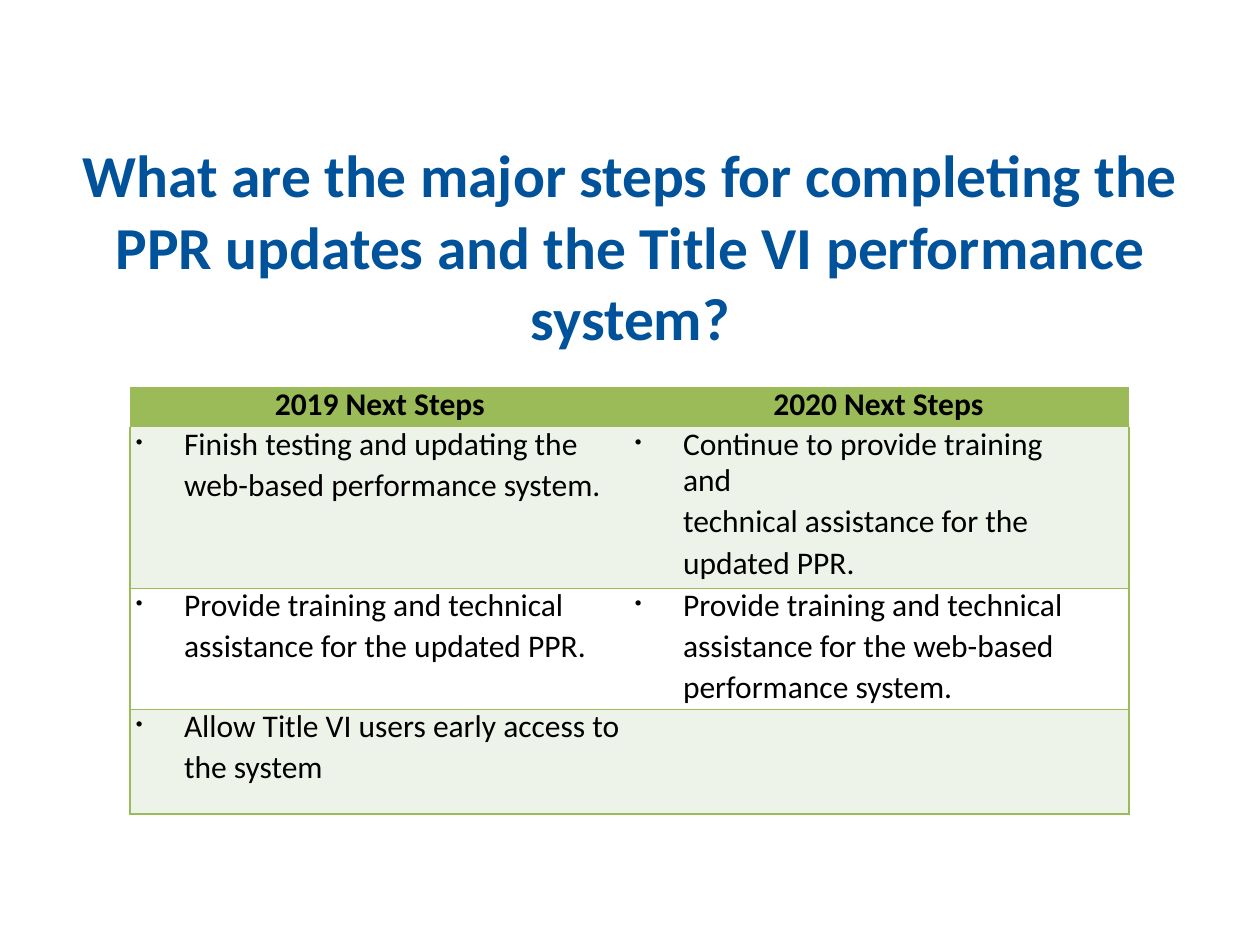
from lxml import etree
from pptx import Presentation
from pptx import util as u
from pptx.dml.color import RGBColor
from pptx.enum import text
from pptx.oxml.ns import qn

COLORS = {"title": "00529B", "ink": "000000", "green": "9BBA58", "tint": "EEF3EA"}
FONT = "Calibri"

TITLE = ("What are the major steps for completing the PPR updates "
         "and the Title VI performance system?")
HEADERS = ["2019 Next Steps", "2020 Next Steps"]
# Each step is a bulleted first line and its continuation.
STEPS = [
    [("Finish testing and updating the", "web-based performance system."),
     ("Continue to provide training and", "technical assistance for the updated PPR.")],
    [("Provide training and technical", "assistance for the updated PPR."),
     ("Provide training and technical", "assistance for the web-based performance system.")],
    [("Allow Title VI users early access to", "the system")],
]
COLUMN_WIDTHS = [9.85, 10.29]
ROW_HEIGHTS = [0.81, 3.25, 2.44, 2.11]
HEADER_INDENTS = [2.92, 3.12]
STEP_INDENTS = [1.09, 1.3]
RIGHT_MARGINS = [0, 0.7]
HANGING = 0.97


def rgb(name):
    return RGBColor.from_string(COLORS[name])


def style(paragraph, size, color, bold=False):
    paragraph.font.name = FONT
    paragraph.font.size = u.Pt(size)
    paragraph.font.bold = bold
    paragraph.font.color.rgb = rgb(color)


def set_borders(cell, sides):
    """Draw green lines on the given sides (from "LRTB") and clear the others."""
    properties = cell._tc.get_or_add_tcPr()
    for position, side in enumerate("LRTB"):
        line = etree.Element(qn(f"a:ln{side}"), w=str(u.Pt(1)))
        if side in sides:
            fill = etree.SubElement(line, qn("a:solidFill"))
            etree.SubElement(fill, qn("a:srgbClr"), val=COLORS["green"])
        else:
            etree.SubElement(line, qn("a:noFill"))
        properties.insert(position, line)


def indent(paragraph, left, bulleted):
    properties = paragraph._p.get_or_add_pPr()
    properties.set("marL", str(u.Cm(left)))
    properties.set("indent", str(-u.Cm(HANGING) if bulleted else 0))
    if bulleted:
        etree.SubElement(properties, qn("a:buSzPct"), val="64000")
        etree.SubElement(properties, qn("a:buChar"), char="•")


def write_step(cell, step, column):
    cell.margin_right = u.Cm(RIGHT_MARGINS[column])
    opening, continuation = cell.text_frame.paragraphs[0], cell.text_frame.add_paragraph()
    opening.line_spacing = u.Pt(20.9)
    if column == 0:
        continuation.space_before = u.Pt(1.6)
    else:
        continuation.line_spacing = 1.07
    for paragraph, words in zip((opening, continuation), step):
        paragraph.text = words
        indent(paragraph, STEP_INDENTS[column], paragraph is opening)
        style(paragraph, 18, "ink")


def add_title(slide):
    title = slide.shapes.title
    title.left, title.top, title.width, title.height = map(u.Cm, (1.63, 2.79, 22.15, 4.39))
    frame = title.text_frame
    frame.text = TITLE
    frame.word_wrap = True
    frame.auto_size = text.MSO_AUTO_SIZE.NONE
    frame.vertical_anchor = text.MSO_ANCHOR.TOP
    frame.margin_left = frame.margin_top = frame.margin_right = frame.margin_bottom = 0
    heading = frame.paragraphs[0]
    heading.alignment = text.PP_ALIGN.CENTER
    style(heading, 34, "title", bold=True)


def add_steps_table(slide):
    table = slide.shapes.add_table(
        len(ROW_HEIGHTS), len(COLUMN_WIDTHS), u.Cm(2.62), u.Cm(7.8),
        u.Cm(sum(COLUMN_WIDTHS)), u.Cm(sum(ROW_HEIGHTS))).table
    table.first_row = table.horz_banding = False
    for column, width in zip(table.columns, COLUMN_WIDTHS):
        column.width = u.Cm(width)
    for row, height in zip(table.rows, ROW_HEIGHTS):
        row.height = u.Cm(height)

    for cell in table.iter_cells():
        cell.margin_left = cell.margin_right = cell.margin_top = cell.margin_bottom = 0

    for column, header in enumerate(HEADERS):
        cell = table.cell(0, column)
        cell.margin_left = u.Cm(HEADER_INDENTS[column])
        cell.fill.solid()
        cell.fill.fore_color.rgb = rgb("green")
        set_borders(cell, "")
        label = cell.text_frame.paragraphs[0]
        label.text = header
        label.line_spacing = u.Pt(20.9)
        style(label, 18, "ink", bold=True)

    for row, steps in enumerate(STEPS, start=1):
        for column in range(len(COLUMN_WIDTHS)):
            cell = table.cell(row, column)
            if row % 2:
                cell.fill.solid()
                cell.fill.fore_color.rgb = rgb("tint")
            else:
                cell.fill.background()
            spans = len(steps) == 1
            outer = "LR" if spans else "LR"[column]
            set_borders(cell, outer + ("B" if row == 1 else "TB"))
            if column < len(steps):
                write_step(cell, steps[column], column)
        if spans:
            table.cell(row, 0).merge(table.cell(row, len(COLUMN_WIDTHS) - 1))


def main():
    deck = Presentation()
    deck.slide_width, deck.slide_height = u.Cm(25.4), u.Cm(19.05)
    slide = deck.slides.add_slide(deck.slide_layouts.get_by_name("Title Only"))
    add_title(slide)
    add_steps_table(slide)
    deck.save("out.pptx")


if __name__ == "__main__":
    main()
